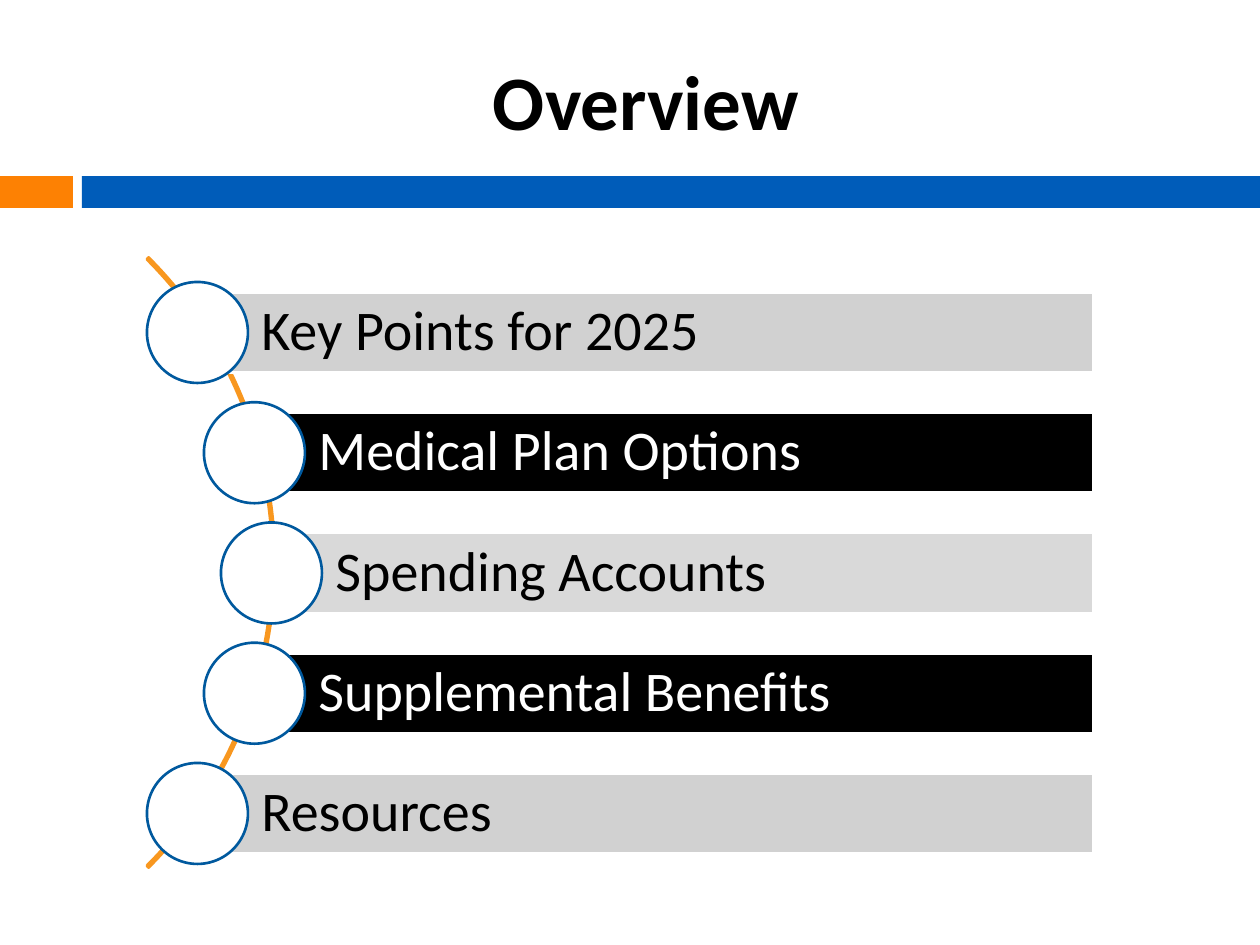
import math
from collections import namedtuple
from dataclasses import dataclass

import pptx
import pptx.dml.color
import pptx.enum.shapes
import pptx.enum.text
import pptx.util

SHAPES = pptx.enum.shapes.MSO_SHAPE
ALIGN = pptx.enum.text.PP_ALIGN
MIDDLE = pptx.enum.text.MSO_ANCHOR.MIDDLE
EMU_PER_PX = 914400 / 126

Box = namedtuple("Box", "left top width height")


@dataclass(frozen=True)
class Theme:
    font: str = "Calibri"
    title_size: int = 44
    item_size: int = 32
    outline: float = 1.5
    black: str = "000000"
    white: str = "FFFFFF"
    orange: str = "FD8103"
    blue: str = "005CB9"
    arc_line: str = "F8971F"
    ring: str = "00599E"
    grey: str = "D1D1D1"
    light_grey: str = "D9D9D9"


THEME = Theme()
AGENDA = [
    ("Key Points for 2025", THEME.grey, THEME.black),
    ("Medical Plan Options", THEME.black, THEME.white),
    ("Spending Accounts", THEME.light_grey, THEME.black),
    ("Supplemental Benefits", THEME.black, THEME.white),
    ("Resources", THEME.grey, THEME.black),
]


def px(length):
    return pptx.util.Emu(round(length * EMU_PER_PX))


def rgb(value):
    return pptx.dml.color.RGBColor.from_string(value)


def set_all(target, values):
    for name, value in values.items():
        setattr(target, name, value)


def place(shape, box):
    set_all(shape, {name: px(value) for name, value in box._asdict().items()})


def add_shape(page, kind, box, fill, line=None):
    shape = page.shapes.add_shape(kind, *map(px, box))
    shape.shadow.inherit = False
    shape.fill.solid()
    shape.fill.fore_color.rgb = rgb(fill)
    if line:
        shape.line.color.rgb = rgb(line)
        shape.line.width = pptx.util.Pt(THEME.outline)
    else:
        shape.line.fill.background()
    return shape


def write_text(shape, text, size, color, frame_format, para_format, bold=False):
    frame = shape.text_frame
    set_all(frame, {"word_wrap": True, "vertical_anchor": MIDDLE, **frame_format})
    para = frame.paragraphs[0]
    set_all(para, para_format)
    span = para.add_run()
    span.text = text
    set_all(span.font, {"name": THEME.font, "size": pptx.util.Pt(size), "bold": bold})
    span.font.color.rgb = rgb(color)


def add_title(page, box, text):
    title = page.shapes.title
    place(title, box)
    write_text(title, text, THEME.title_size, THEME.black, {},
               {"alignment": ALIGN.CENTER}, bold=True)


def add_divider(page, box):
    """Short orange block and long blue band, parted by a narrow gap."""
    block, gap = 73, 9
    add_shape(page, SHAPES.RECTANGLE, box._replace(width=block), THEME.orange)
    band = box._replace(left=box.left + block + gap, width=box.width - block - gap)
    add_shape(page, SHAPES.RECTANGLE, band, THEME.blue)


def add_arc(page, box):
    arc = add_shape(page, SHAPES.BLOCK_ARC, box, THEME.orange, THEME.arc_line)
    for index, value in enumerate((189, 27, 0.00315)):
        arc.adjustments[index] = value


def add_item(page, box, text, fill, color):
    """A bar with a circle, as high as the box, centred on the bar's left end."""
    bar_height = 80
    circle = box.height
    bar_box = Box(box.left + circle / 2, box.top + (circle - bar_height) / 2,
                  box.width - circle / 2, bar_height)
    bar = add_shape(page, SHAPES.RECTANGLE, bar_box, fill, THEME.white)
    margins = {f"margin_{side}": px(11) for side in ("top", "right", "bottom")}
    write_text(bar, text, THEME.item_size, color, {**margins, "margin_left": px(64)},
               {"alignment": ALIGN.LEFT, "line_spacing": 0.9})
    add_shape(page, SHAPES.OVAL, box._replace(width=circle), THEME.white, THEME.ring)


def add_agenda(page, box, items):
    """Evenly spaced items whose circles follow an arc that bulges to the right."""
    circle, radius, arc_size = 101, 428, 863
    arc_left = box.left - 735
    add_arc(page, Box(arc_left, box.top - 151, arc_size, arc_size))
    pitch = (box.height - circle) / (len(items) - 1)
    for index, item in enumerate(items):
        rise = (index - (len(items) - 1) / 2) * pitch
        reach = math.sqrt(radius ** 2 - rise ** 2)
        left = round(arc_left + arc_size / 2 + reach - circle / 2)
        item_box = Box(left, box.top + index * pitch,
                       box.left + box.width - left, circle)
        add_item(page, item_box, *item)


def main():
    deck = pptx.Presentation()
    set_all(deck, {"slide_width": px(1260), "slide_height": px(945)})
    page = deck.slides.add_slide(deck.slide_layouts.get_by_name("Title Only"))
    add_divider(page, Box(0, 176, 1260, 32))
    add_title(page, Box(84, 32, 1124, 136), "Overview")
    add_agenda(page, Box(147, 282, 946, 582), AGENDA)
    deck.save("out.pptx")


if __name__ == "__main__":
    main()
